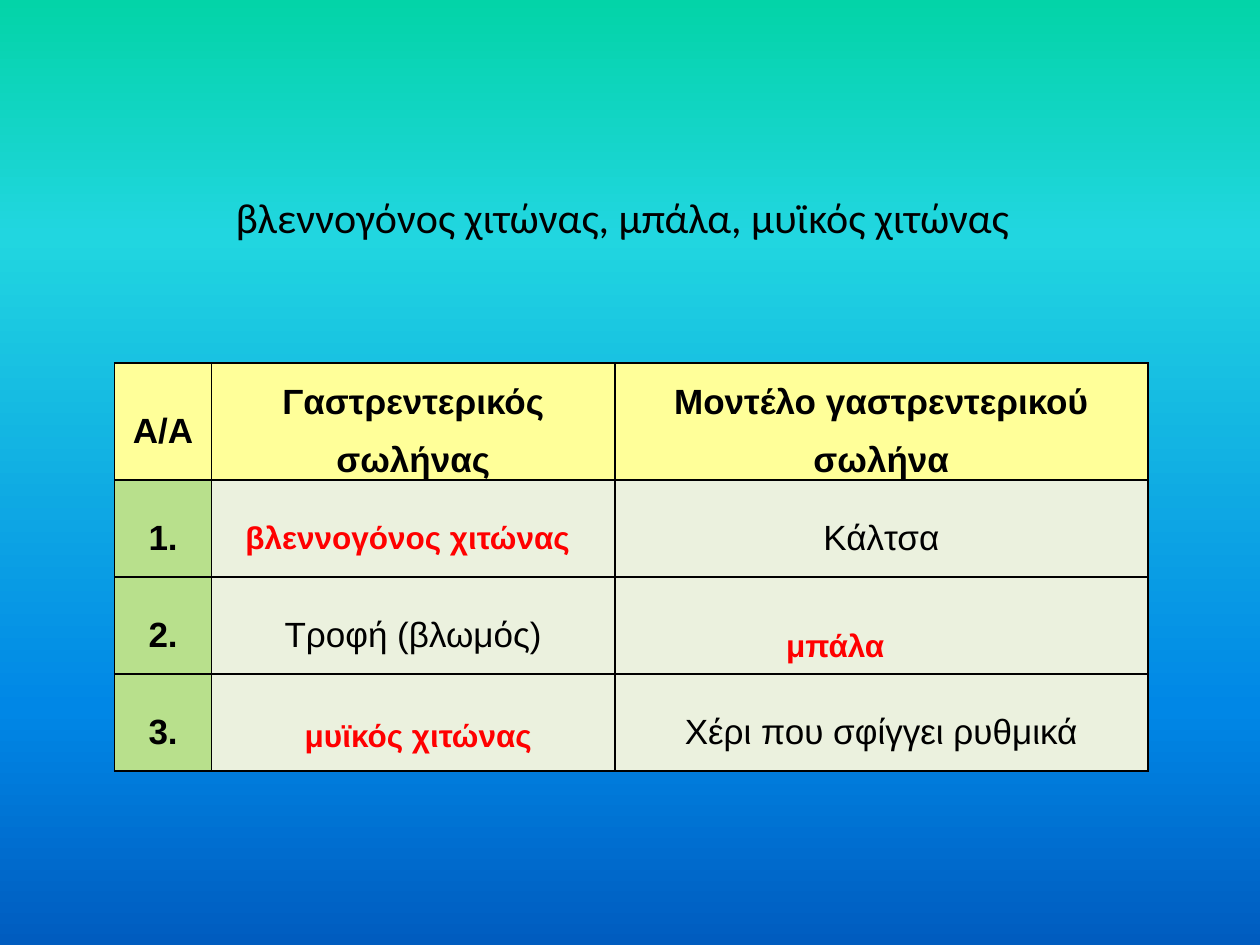
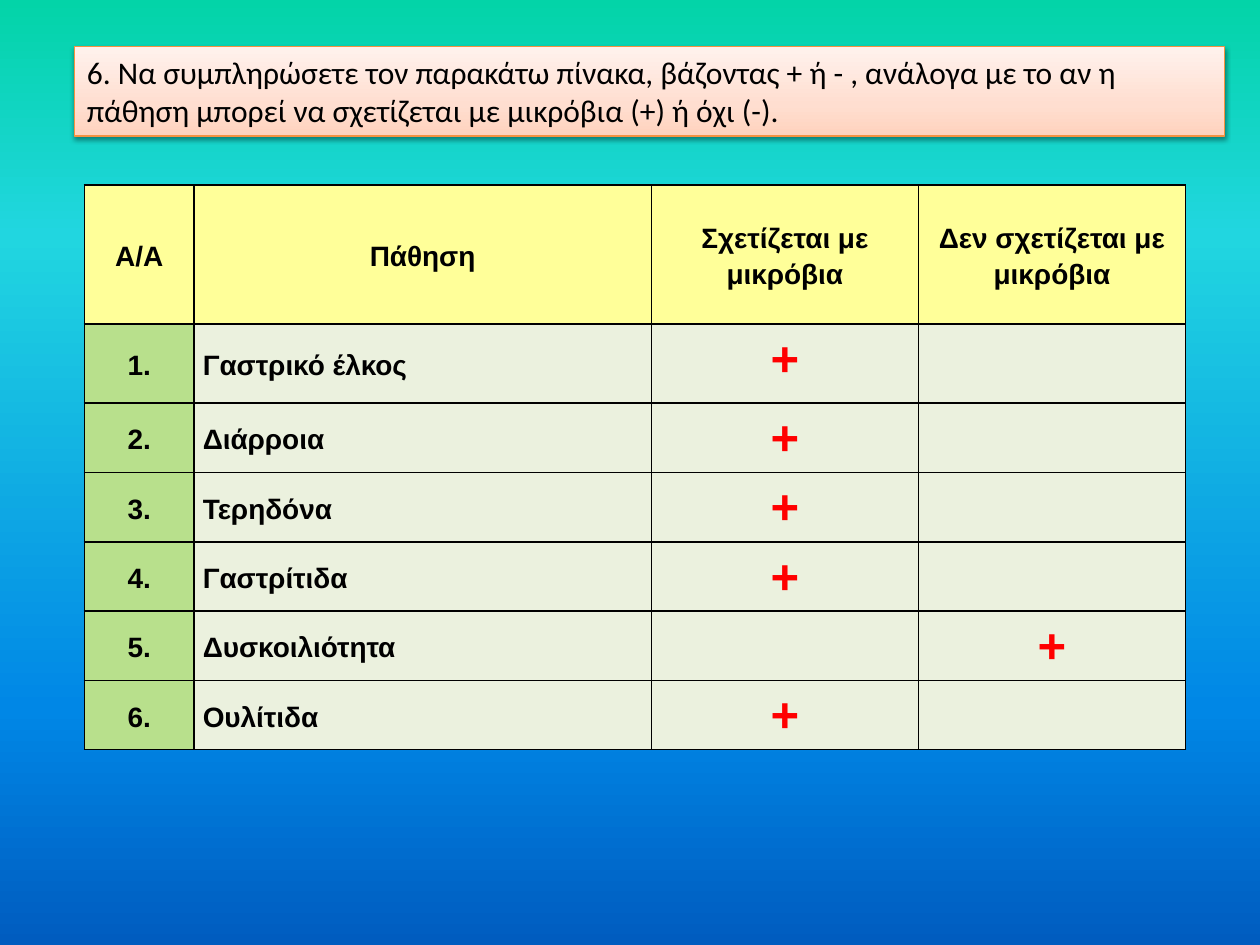
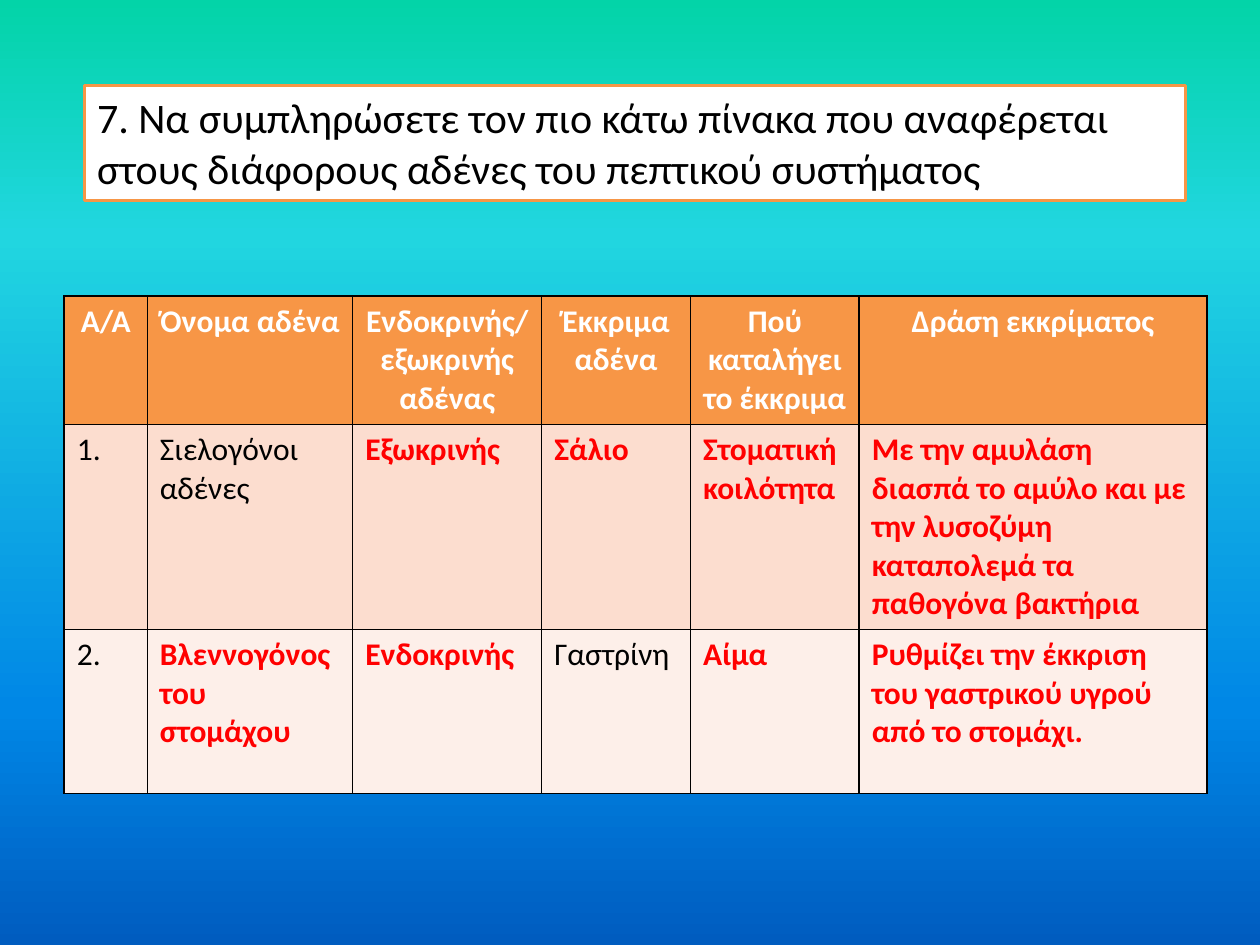
import pptx
import pptx.util
import pptx.oxml
import pptx.oxml.ns
from pptx.dml.color import RGBColor
from pptx.enum.text import MSO_ANCHOR, MSO_AUTO_SIZE, PP_ALIGN
from pptx.util import Inches

BLACK = RGBColor(0x00, 0x00, 0x00)
WHITE = RGBColor(0xFF, 0xFF, 0xFF)
RED = RGBColor(0xFF, 0x00, 0x00)
YELLOW = RGBColor(0xFF, 0xFF, 0x99)
GREEN = RGBColor(0xB8, 0xE0, 0x8C)
PALE = RGBColor(0xEB, 0xF1, 0xDE)
ORANGE = RGBColor(0xF7, 0x96, 0x46)
EDGE = RGBColor(0xF6, 0x92, 0x40)
PEACH = RGBColor(0xFC, 0xDD, 0xCF)
CREAM = RGBColor(0xFD, 0xEF, 0xE9)
SKY = [(0, "03D4A8"), (25, "21D6E0"), (75, "0087E6"), (100, "005CBF")]
BLUSH = [(0, "FFD2BD"), (35, "FFDED0"), (100, "FFF2ED")]
LEFT, MID = PP_ALIGN.LEFT, PP_ALIGN.CENTER
NS = pptx.oxml.ns.nsdecls("a")


def write(frame, text, face, size, tint, bold=False, align=LEFT, gap=1.0):
    """Fill a text frame and format each of its paragraphs."""
    frame.text = text
    look = {"name": face, "size": pptx.util.Pt(size), "bold": bold}
    for par in frame.paragraphs:
        par.alignment, par.line_spacing = align, gap
        for run in par.runs:
            for key, value in look.items():
                setattr(run.font, key, value)
            run.font.color.rgb = tint


def grid(slide, left, top, cols, rows):
    """Add a table with thin black borders on every cell."""
    frame = slide.shapes.add_table(
        len(rows), len(cols), Inches(left), Inches(top),
        Inches(sum(cols)), Inches(sum(rows)))
    table = frame.table
    table.horz_banding = False
    for col, width in zip(table.columns, cols):
        col.width = Inches(width)
    for row, height in zip(table.rows, rows):
        row.height = Inches(height)
    for cell in table.iter_cells():
        props = cell._tc.get_or_add_tcPr()
        for side in "LRTB":
            props.append(pptx.oxml.parse_xml(
                f'<a:ln{side} {NS} w="12700"><a:solidFill>'
                f'<a:srgbClr val="{BLACK}"/></a:solidFill></a:ln{side}>'))
    return table


deck = pptx.Presentation()
deck.slide_width, deck.slide_height = Inches(10), Inches(7.5)

# Slides and titles: text, size, place
heads = [
    ("βλεννογόνος χιτώνας, μπάλα, μυϊκός χιτώνας", 24, (1.77, 1.47, 6.4, 0.5)),
    ("6. Να συμπληρώσετε τον παρακάτω πίνακα, βάζοντας + ή - , ανάλογα με το "
     "αν η πάθηση μπορεί να σχετίζεται με μικρόβια (+) ή όχι (-).",
     18, (0.59, 0.37, 9.13, 0.71)),
    ("7. Να συμπληρώσετε τον πιο κάτω πίνακα που αναφέρεται στους διάφορους "
     "αδένες του πεπτικού συστήματος", 24, (0.67, 0.68, 8.74, 0.91)),
]
titles = []
for text, size, place in heads:
    title = deck.slides.add_slide(deck.slide_layouts[5]).shapes.title
    title.left, title.top, title.width, title.height = map(Inches, place)
    frame = title.text_frame
    write(frame, text, "Calibri", size, BLACK)
    form = {"word_wrap": True, "auto_size": MSO_AUTO_SIZE.NONE,
            "vertical_anchor": MSO_ANCHOR.TOP}
    for key, value in form.items():
        setattr(frame, key, value)
    titles.append(title)
titles[0].text_frame.word_wrap = False
model, germs, glands = deck.slides

# Title boxes: outline, fill and shadow
for title, tint, width in ((titles[1], EDGE, 0.75), (titles[2], ORANGE, 2)):
    title.line.color.rgb = tint
    title.line.width = pptx.util.Pt(width)
titles[2].fill.solid()
titles[2].fill.fore_color.rgb = WHITE
titles[1].element.spPr.append(pptx.oxml.parse_xml(
    f'<a:effectLst {NS}><a:outerShdw blurRad="39370" dist="20320" '
    'dir="5400000" rotWithShape="0"><a:srgbClr val="000000">'
    '<a:alpha val="38000"/></a:srgbClr></a:outerShdw></a:effectLst>'))

# Gradients of the shared background and of the second title
master = deck.slide_master
for owner, fill, stops, angle in (
        (master.element.cSld, master.background.fill, SKY, 270),
        (titles[1].element, titles[1].fill, BLUSH, 90)):
    fill.gradient()
    fill.gradient_angle = angle
    inner = "".join(f'<a:gs pos="{pos * 1000}"><a:srgbClr val="{tint}"/></a:gs>'
                    for pos, tint in stops)
    old = owner.xpath(".//a:gsLst")[0]
    old.getparent().replace(
        old, pptx.oxml.parse_xml(f"<a:gsLst {NS}>{inner}</a:gsLst>"))

# Slides 1 and 2: numbered tables
parts = [
    ("Α/Α", "Γαστρεντερικός σωλήνας", "Μοντέλο γαστρεντερικού σωλήνα"),
    ("1.", "", "Κάλτσα"),
    ("2.", "Tροφή (βλωμός)", ""),
    ("3.", "", "Χέρι που σφίγγει ρυθμικά"),
]
ills = [
    ("Α/Α", "Πάθηση", "Σχετίζεται με μικρόβια", "Δεν σχετίζεται με μικρόβια"),
    ("1.", "Γαστρικό έλκος", "+", ""),
    ("2.", "Διάρροια", "+", ""),
    ("3.", "Τερηδόνα", "+", ""),
    ("4.", "Γαστρίτιδα", "+", ""),
    ("5.", "Δυσκοιλιότητα", "", "+"),
    ("6.", "Ουλίτιδα", "+", ""),
]
plans = [
    (grid(model, 0.91, 2.88, [0.77, 3.2, 4.23], [0.93] + [0.77] * 3),
     parts, 20, 1.5, False, MID),
    (grid(germs, 0.67, 1.47, [0.87, 3.63, 2.12, 2.12], [1.1, 0.63] + [0.55] * 5),
     ills, 16, 1.15, True, LEFT),
]
for table, data, size, gap, bold, align in plans:
    for r, line in enumerate(data):
        for c, text in enumerate(line):
            cell = table.cell(r, c)
            cell.margin_left = cell.margin_right = Inches(0.07)
            cell.margin_top = cell.margin_bottom = 0
            cell.fill.solid()
            cell.fill.fore_color.rgb = YELLOW if r == 0 else PALE if c else GREEN
            if text == "+":
                write(cell.text_frame, text, "Arial", 28, RED, True, MID, gap)
            elif text:
                cell.vertical_anchor = MSO_ANCHOR.MIDDLE
                head = r == 0 or c == 0
                write(cell.text_frame, text, "Arial", size, BLACK,
                      head or bold, MID if head else align, gap)

# Slide 1: answers laid over the empty cells
answers = [
    ("βλεννογόνος χιτώνας", 1.85, 4.06, 2.8, 0.4, 1.0),
    ("μπάλα", 6.14, 4.77, 1.06, 0.56, 1.5),
    ("μυϊκός χιτώνας", 2.32, 5.63, 2.02, 0.4, 1.0),
]
for text, left, top, width, height, gap in answers:
    box = model.shapes.add_textbox(*map(Inches, (left, top, width, height)))
    box.text_frame.word_wrap = True
    write(box.text_frame, text, "Arial", 18, RED, True, gap=gap)

# Slide 3: glands, with the given words in black and the answers in red
rows = [
    ("Α/Α", "Όνομα αδένα", "Ενδοκρινής/ εξωκρινής\nαδένας", "Έκκριμα αδένα",
     "Πού καταλήγει το έκκριμα", "Δράση εκκρίματος"),
    ("1.", "Σιελογόνοι αδένες", "Εξωκρινής", "Σάλιο", "Στοματική κοιλότητα",
     "Με την αμυλάση διασπά το αμύλο και με την λυσοζύμη καταπολεμά τα "
     "παθογόνα βακτήρια"),
    ("2.", "Βλεννογόνος του στομάχου", "Ενδοκρινής", "Γαστρίνη", "Αίμα",
     "Ρυθμίζει την έκκριση του γαστρικού υγρού από το στομάχι."),
]
given = {"1.", "2.", "Σιελογόνοι αδένες", "Γαστρίνη"}
table = grid(glands, 0.51, 2.35, [0.66, 1.63, 1.5, 1.18, 1.34, 2.76],
             [1.02, 1.6, 1.3])
for r, (line, back) in enumerate(zip(rows, (ORANGE, PEACH, CREAM))):
    for c, text in enumerate(line):
        cell = table.cell(r, c)
        cell.fill.solid()
        cell.fill.fore_color.rgb = back
        tint = WHITE if r == 0 else BLACK if text in given else RED
        write(cell.text_frame, text, "Calibri", 18, tint,
              text not in given, LEFT if r else MID)

deck.save("out.pptx")
